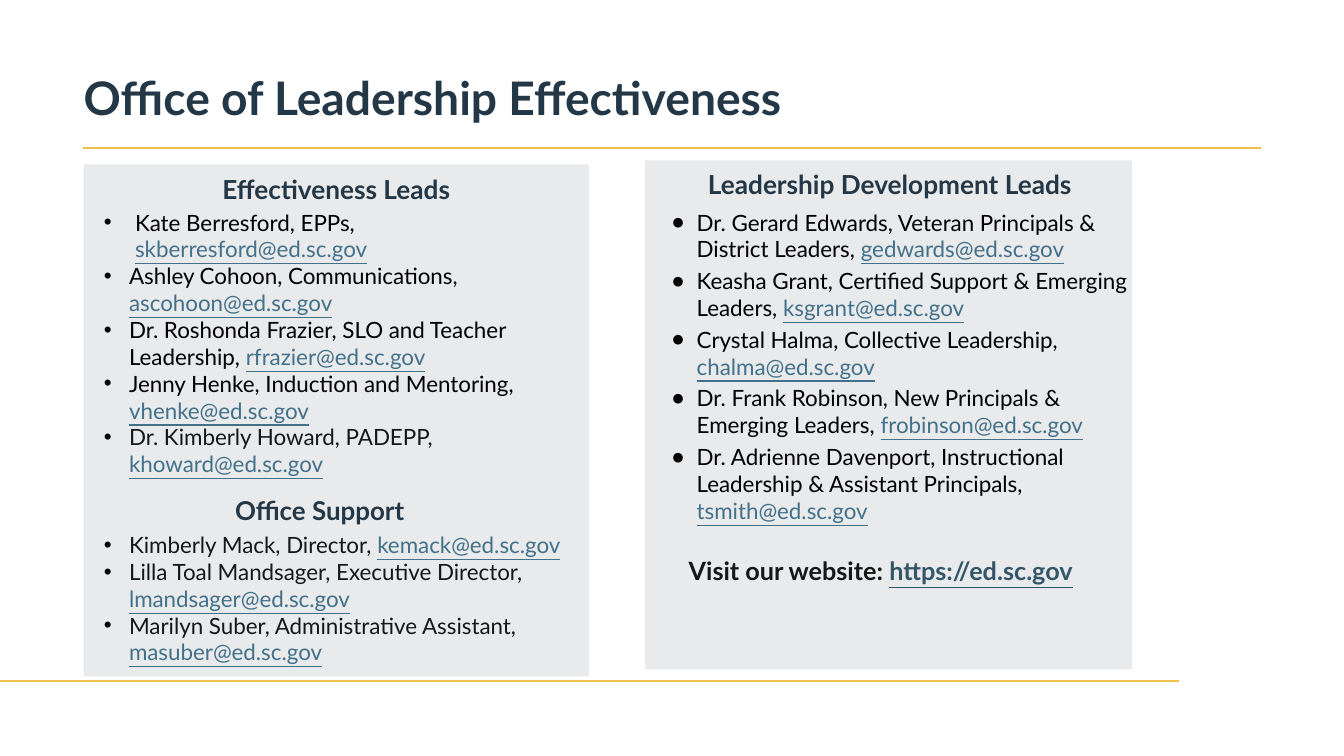
import pptx
import pptx.dml.color
import pptx.enum.shapes
import pptx.enum.text
import pptx.oxml.ns
import pptx.util
from lxml import etree

SCALE = 9144  # EMU in one px, 100 px to the inch
COLORS = {
    "navy": "233746",
    "gold": "EFC04C",
    "black": "000000",
    "ink": "171717",
    "link": "43718A",
    "site": "335669",
}
ALIGN = pptx.enum.text.PP_ALIGN


def px(length):
    return pptx.util.Emu(length * SCALE)


def rgb(name):
    return pptx.dml.color.RGBColor.from_string(COLORS[name])


def add_xml(parent, tag, **attributes):
    return etree.SubElement(parent, pptx.oxml.ns.qn(tag), attributes)


def write_para(frame, spans, size=16, bold=False, align=ALIGN.LEFT, line=None,
               before=0, level=0, indent=0, hanging=0, bullet=None):
    """Write one paragraph; spans are (text, color name, underlined)."""
    para = frame.paragraphs[0]
    if para.runs:
        para = frame.add_paragraph()
    props = para._p.get_or_add_pPr()
    props.set("marL", str(px(indent)))
    props.set("indent", str(px(-hanging)))
    if bullet:
        add_xml(add_xml(props, "a:buClr"), "a:srgbClr", val=COLORS["black"])
        add_xml(props, "a:buFont", typeface="Arial")
        add_xml(props, "a:buChar", char=bullet)
    else:
        add_xml(props, "a:buNone")
    para.level = level
    para.alignment = align
    para.space_before = pptx.util.Pt(before)
    para.space_after = pptx.util.Pt(0)
    para.line_spacing = pptx.util.Pt(line) if line else 1.0
    for text, color, underlined in spans:
        span = para.add_run()
        span.text = text
        span.font.name = "Lato"
        span.font.size = pptx.util.Pt(size)
        span.font.bold = bold
        span.font.underline = underlined
        span.font.color.rgb = rgb(color)


class ContactPage:
    def __init__(self, deck):
        self.page = deck.slides.add_slide(deck.slide_layouts[3])
        self.shapes = self.page.shapes

    def frame(self, shape, inset=(0, 0)):
        frame = shape.text_frame
        frame.word_wrap = True
        frame.auto_size = pptx.enum.text.MSO_AUTO_SIZE.NONE
        frame.vertical_anchor = pptx.enum.text.MSO_ANCHOR.TOP
        frame.margin_left = frame.margin_right = px(inset[0])
        frame.margin_top = frame.margin_bottom = px(inset[1])
        return frame

    def placeholder(self, index, left, top, width, height):
        """Move a placeholder into position, in front of what is there."""
        holder = self.page.placeholders[index]
        holder.left, holder.top = px(left), px(top)
        holder.width, holder.height = px(width), px(height)
        self.shapes._spTree.append(holder._element)
        return self.frame(holder)

    def heading(self, text, left, top, width, height, inset=(0, 0), **style):
        box = self.shapes.add_textbox(px(left), px(top), px(width), px(height))
        write_para(self.frame(box, inset), [(text, "navy", False)],
                   bold=True, align=ALIGN.CENTER, **style)

    def panel(self, left, top, width, height):
        box = self.shapes.add_shape(pptx.enum.shapes.MSO_SHAPE.RECTANGLE,
                                    px(left), px(top), px(width), px(height))
        box.shadow.inherit = False
        box.line.fill.background()
        box.fill.solid()
        box.fill.fore_color.rgb = rgb("navy")
        tint = box._element.spPr.find(".//" + pptx.oxml.ns.qn("a:srgbClr"))
        add_xml(tint, "a:alpha", val="10000")

    def rule(self, left, right, top):
        rule = self.shapes.add_connector(pptx.enum.shapes.MSO_CONNECTOR.STRAIGHT,
                                         px(left), px(top), px(right), px(top))
        rule.line.color.rgb = rgb("gold")
        rule.line.width = pptx.util.Pt(1.5)
        add_xml(rule._element.spPr, "a:effectLst")

    def contact(self, frame, role, mail, color="black", **style):
        write_para(frame, [(role + ", ", color, False), (mail, "link", True)], **style)


EFFECTIVENESS = [
    ("Ashley Cohoon, Communications", "ascohoon@ed.sc.gov", "black"),
    ("Dr. Roshonda Frazier, SLO and Teacher Leadership", "rfrazier@ed.sc.gov", "black"),
    ("Jenny Henke, Induction and Mentoring", "vhenke@ed.sc.gov", "black"),
    ("Dr. Kimberly Howard, PADEPP", "khoward@ed.sc.gov", "ink"),
]
SUPPORT = [
    ("Kimberly Mack, Director", "kemack@ed.sc.gov"),
    ("Lilla Toal Mandsager, Executive Director", "lmandsager@ed.sc.gov"),
    ("Marilyn Suber, Administrative Assistant", "masuber@ed.sc.gov"),
]
DEVELOPMENT = [
    ("Dr. Gerard Edwards, Veteran Principals & District Leaders", "gedwards@ed.sc.gov"),
    ("Keasha Grant, Certified Support & Emerging Leaders", "ksgrant@ed.sc.gov"),
    ("Crystal Halma, Collective Leadership", "chalma@ed.sc.gov"),
    ("Dr. Frank Robinson, New Principals & Emerging Leaders", "frobinson@ed.sc.gov"),
    ("Dr. Adrienne Davenport, Instructional Leadership & Assistant Principals",
     "tsmith@ed.sc.gov"),
]


def main():
    deck = pptx.Presentation()
    deck.slide_width, deck.slide_height = px(1333), px(750)
    contacts = ContactPage(deck)

    # Title and upper rule
    title = contacts.placeholder(0, 83, 78, 1306, 48)
    write_para(title, [("Office of Leadership Effectiveness", "navy", False)],
               size=33, bold=True, line=33.3)
    contacts.rule(82, 1251, 147)

    # Left panel: effectiveness leads and office support
    contacts.panel(83, 163, 501, 508)
    contacts.heading("Effectiveness Leads", 177, 181, 313, 24, size=18.7, line=16)
    left = contacts.placeholder(1, 103, 207, 466, 458)
    contacts.contact(left, "Kate Berresford, EPPs", "skberresford@ed.sc.gov",
                     indent=31, hanging=31, bullet="•")
    for role, mail, color in EFFECTIVENESS:
        contacts.contact(left, role, mail, color, indent=25, hanging=25, bullet="•")
    for row, (role, mail) in enumerate(SUPPORT):
        contacts.contact(left, role, mail, "ink", indent=25, hanging=25, bullet="•",
                         before=0 if row else 38.4)
    contacts.heading("Office Support", 167, 486, 300, 41, inset=(10, 5), size=18.5)

    # Right panel: leadership development leads and website
    contacts.panel(640, 159, 483, 505)
    contacts.heading("Leadership Development Leads", 685, 176, 395, 24,
                     size=18.7, line=16)
    right = contacts.placeholder(2, 650, 207, 482, 414)
    for row, (role, mail) in enumerate(DEVELOPMENT):
        contacts.contact(right, role, mail, level=1, indent=41, hanging=25,
                         bullet="●", before=3.5 if row else 0)
    write_para(right, [("Visit our website: ", "ink", False),
                       ("https://ed.sc.gov", "site", True)],
               size=18, bold=True, level=1, indent=33, before=22.7)

    # Lower rule
    contacts.rule(0, 1169, 676)
    deck.save("out.pptx")


if __name__ == "__main__":
    main()
